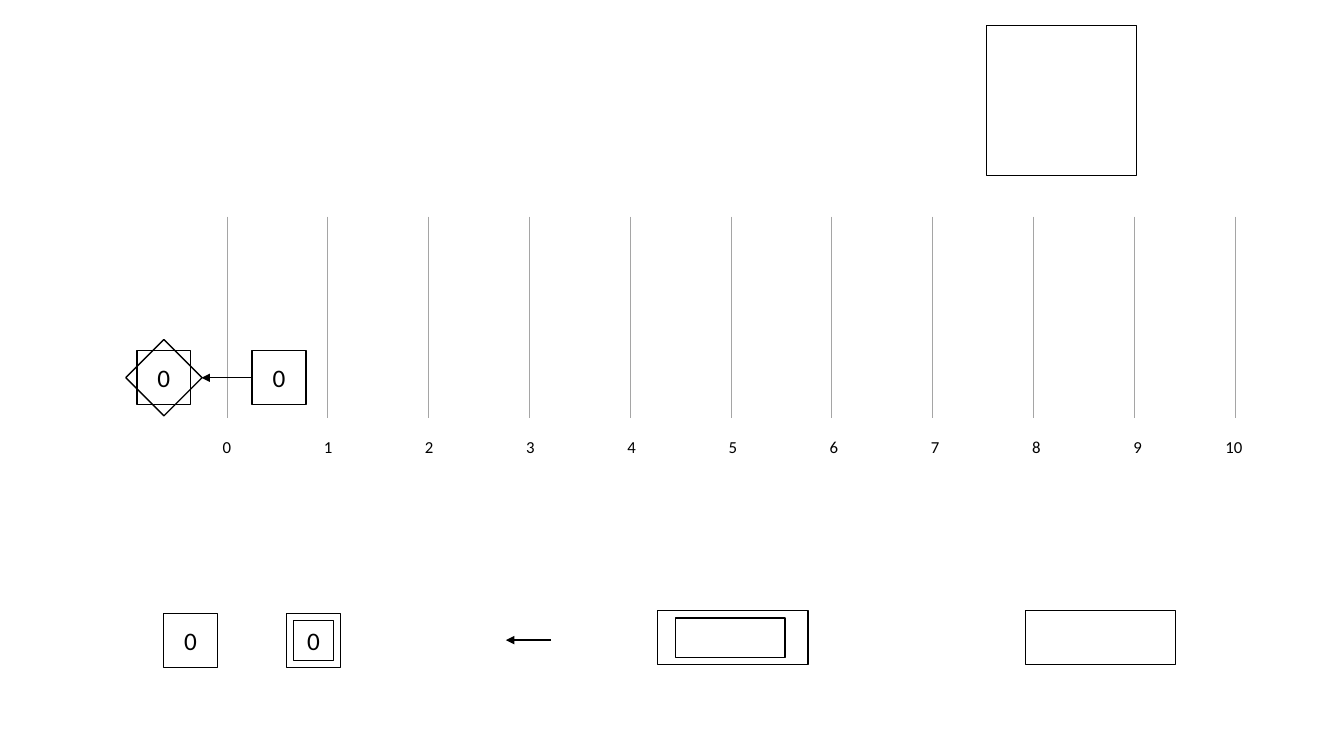
from pptx import Presentation
from pptx.dml.color import RGBColor
from pptx.enum.shapes import MSO_CONNECTOR as Connector, MSO_SHAPE as Shape
from pptx.enum.text import MSO_ANCHOR as Anchor, MSO_AUTO_SIZE as AutoSize, PP_ALIGN as Align
from pptx.oxml.ns import qn
from pptx.util import Cm, Pt
from lxml.etree import SubElement

CELL = 1.36
INNER = 1
WIDE = 3.79


def color(value):
    return RGBColor.from_string(value)


def write(frame, text, size=18, align=Align.LEFT, anchor=Anchor.TOP, wrap=True):
    frame.word_wrap = wrap
    frame.vertical_anchor = anchor
    para = frame.paragraphs[0]
    para.alignment = align
    span = para.add_run()
    span.text = text
    span.font.name = Sketch.font
    span.font.size = Pt(size)
    span.font.color.rgb = color(Sketch.ink)


class Sketch:
    """Drawing style together with the slide being drawn on."""
    font = "Calibri"
    ink = "000000"
    paper = "FFFFFF"
    grid = "A5A5A5"

    def __init__(self, page):
        self.page = page

    def group(self):
        return self.page.shapes.add_group_shape()

    def label(self, text, left, top, width, height):
        box = self.page.shapes.add_textbox(Cm(left), Cm(top), Cm(width), Cm(height))
        write(box.text_frame, text, size=12, wrap=False)
        box.text_frame.auto_size = AutoSize.SHAPE_TO_FIT_TEXT

    def rectangle(self, left, top, width, height, text="", filled=False, turn=0, group=None):
        shapes = (group or self.page).shapes
        box = shapes.add_shape(Shape.RECTANGLE, Cm(left), Cm(top), Cm(width), Cm(height))
        box.shadow.inherit = False
        box.rotation = turn
        if filled:
            box.fill.solid()
            box.fill.fore_color.rgb = color(self.paper)
        else:
            box.fill.background()
        box.line.color.rgb = color(self.ink)
        box.line.width = Pt(1)
        if text:
            write(box.text_frame, text, align=Align.CENTER, anchor=Anchor.MIDDLE)

    def arrow(self, start, end, y):
        line = self.page.shapes.add_connector(
            Connector.STRAIGHT, Cm(start), Cm(y), Cm(end), Cm(y))
        line.line.color.rgb = color(self.ink)
        line.line.width = Pt(1)
        SubElement(line.line._get_or_add_ln(), qn("a:tailEnd"), type="triangle")
        SubElement(line._element.spPr, qn("a:effectLst"))

    def ruler(self, left, top, width, height, rows=2, columns=10):
        """Empty table that shows only its vertical borders."""
        table = self.page.shapes.add_table(
            rows, columns, Cm(left), Cm(top), Cm(width), Cm(height)).table
        table.first_row = table.horz_banding = False
        for cell in table.iter_cells():
            properties = cell._tc.get_or_add_tcPr()
            for side in ("lnL", "lnR"):
                border = SubElement(properties, qn(f"a:{side}"), w=str(Pt(0.5)))
                fill = SubElement(border, qn("a:solidFill"))
                SubElement(fill, qn("a:srgbClr"), val=self.grid)
            for side in ("lnT", "lnB"):
                border = SubElement(properties, qn(f"a:{side}"))
                SubElement(border, qn("a:noFill"))
            cell.fill.background()


def main():
    deck = Presentation()
    deck.slide_width, deck.slide_height = Cm(33.87), Cm(19.05)
    sketch = Sketch(deck.slides.add_slide(deck.slide_layouts[6]))

    # Numbered scale
    for number in range(10):
        sketch.label(str(number), 5.36 + 2.55 * number, 10.87, 0.74, 0.76)
    sketch.label("10", 30.63, 10.87, 0.94, 0.76)
    sketch.ruler(5.72, 5.46, 25.4, 5.08)

    # Linked cells on the scale
    star = sketch.group()
    sketch.rectangle(3.45, 8.84, CELL, CELL, "0", group=star)
    sketch.rectangle(3.45, 8.84, CELL, CELL, turn=45, group=star)
    sketch.rectangle(6.35, 8.84, CELL, CELL, "0")
    sketch.arrow(6.35, 5.08, 9.52)

    # Spare parts below the scale
    double_cell = sketch.group()
    sketch.rectangle(7.22, 15.46, CELL, CELL, "0", group=double_cell)
    sketch.rectangle(7.4, 15.64, INNER, INNER, group=double_cell)
    sketch.rectangle(4.12, 15.46, CELL, CELL, "0")
    sketch.arrow(13.89, 12.75, 16.13)
    double_bar = sketch.group()
    sketch.rectangle(16.57, 15.38, WIDE, CELL, filled=True, group=double_bar)
    sketch.rectangle(17.03, 15.57, 2.75, INNER, filled=True, group=double_bar)
    sketch.rectangle(24.86, 0.64, WIDE, WIDE, filled=True)
    sketch.rectangle(25.84, 15.38, WIDE, CELL, filled=True)

    deck.save("out.pptx")


if __name__ == "__main__":
    main()
